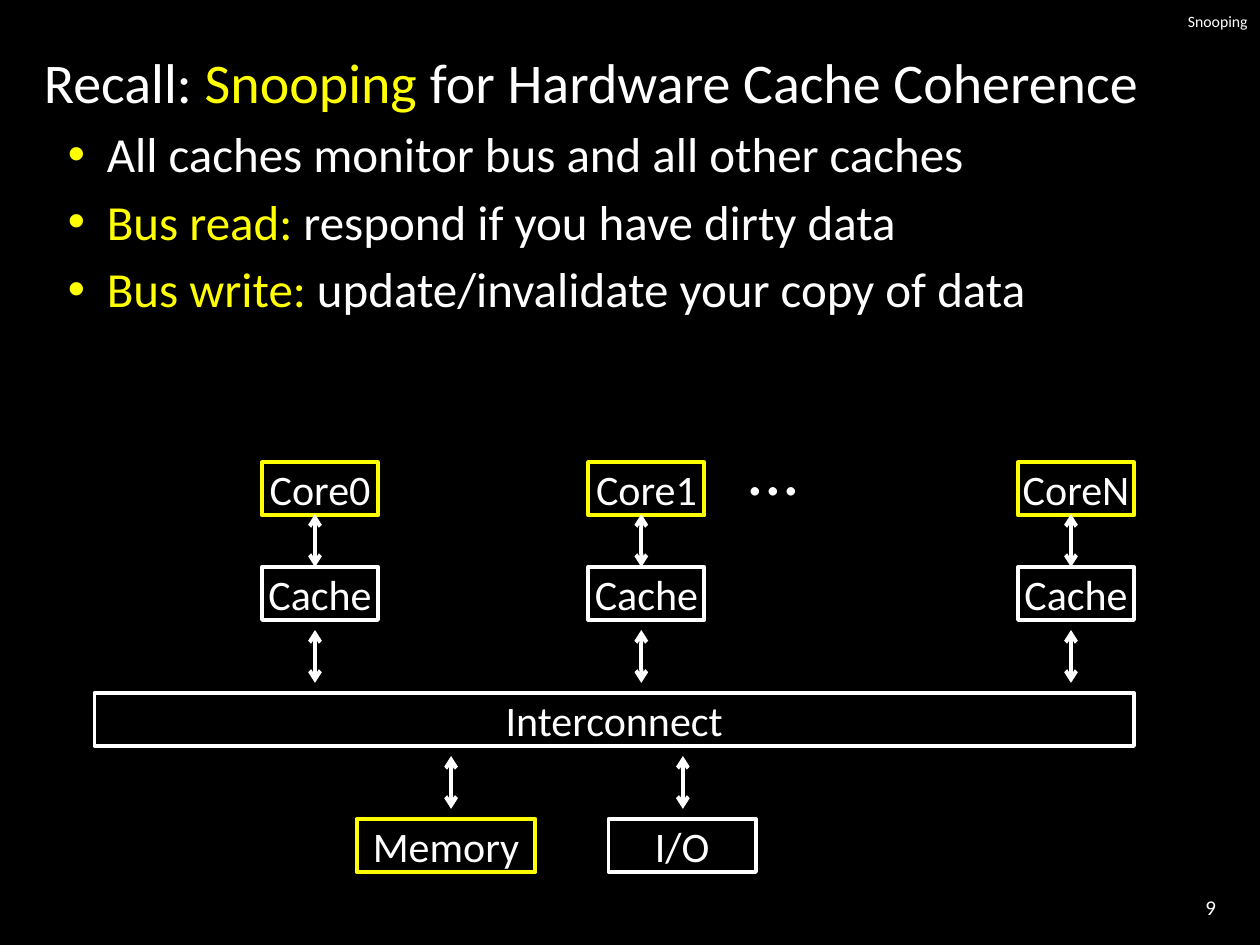
from lxml import etree
from pptx import Presentation
from pptx import util as u
from pptx.dml.color import RGBColor
from pptx.enum import shapes, text
from pptx.oxml.ns import qn

BLACK = RGBColor(0, 0, 0)
WHITE = RGBColor(255, 255, 255)
YELLOW = RGBColor(255, 255, 0)
Inches = u.Inches
Pt = u.Pt
LEFT, CENTER, RIGHT = text.PP_ALIGN.LEFT, text.PP_ALIGN.CENTER, text.PP_ALIGN.RIGHT

prs = Presentation()
prs.slide_width, prs.slide_height = Inches(10), Inches(7.5)
s = prs.slides.add_slide(prs.slide_layouts[6])
s.background.fill.solid()
s.background.fill.fore_color.rgb = BLACK


def write(p, runs, size, align=LEFT):
    p.alignment = align
    p.font.size = Pt(size)
    p.font.name = "Calibri"
    for words, color in runs:
        r = p.add_run()
        r.text = words
        r.font.color.rgb = color


def add_arrow(x, y):
    sp = s.shapes.add_connector(
        shapes.MSO_CONNECTOR.STRAIGHT, Inches(x), Inches(y), Inches(x), Inches(y + 0.42))
    sp.line.color.rgb = WHITE
    sp.line.width = Pt(2.25)
    ln = sp.line._get_or_add_ln()
    for end in ("a:headEnd", "a:tailEnd"):
        etree.SubElement(ln, qn(end), type="arrow")
    etree.SubElement(sp._element.spPr, qn("a:effectLst"))


labels = [
    ("9", 8.92, 7, 0.83, 0.4, 12, RIGHT, text.MSO_ANCHOR.MIDDLE, True),
    ("Snooping", 6.17, 0, 3.83, 0.33, 9, RIGHT, text.MSO_ANCHOR.MIDDLE, True),
    ("...", 5.83, 3.33, 0.63, 0.77, 40, LEFT, text.MSO_ANCHOR.TOP, False),
]
for words, x, y, w, h, size, align, anchor, wrap in labels:
    tf = s.shapes.add_textbox(Inches(x), Inches(y), Inches(w), Inches(h)).text_frame
    tf.word_wrap = wrap
    tf.vertical_anchor = anchor
    write(tf.paragraphs[0], [(words, WHITE)], size, align)

tf = s.shapes.add_textbox(Inches(0.25), Inches(0.33), Inches(9.5), Inches(3)).text_frame
tf.word_wrap = True
p = tf.paragraphs[0]
p.space_before = Pt(2)
write(p, [("Recall: ", WHITE), ("Snooping ", YELLOW),
          ("for Hardware Cache Coherence", WHITE)], 32)

bullets = [
    [("All caches monitor bus and all other caches", WHITE)],
    [("Bus read: ", YELLOW), ("respond if you have dirty data", WHITE)],
    [("Bus write: ", YELLOW), ("update/invalidate your copy of data", WHITE)],
]
for runs in bullets:
    p = tf.add_paragraph()
    p.level = 1
    p.space_before = Pt(5)
    write(p, runs, 28)
    pPr = p._p.get_or_add_pPr()
    pPr.set("marL", str(Inches(0.5)))
    pPr.set("indent", str(Inches(-0.31)))
    bu_font = etree.Element(qn("a:buFont"), typeface="Arial")
    bu_char = etree.Element(qn("a:buChar"), char="•")
    bu_color = etree.Element(qn("a:buClr"))
    etree.SubElement(bu_color, qn("a:srgbClr"), val=str(YELLOW))
    pPr.find(qn("a:spcBef")).addnext(bu_color)
    bu_color.addnext(bu_font)
    bu_font.addnext(bu_char)

boxes = [
    ("Memory", 2.83, 6.5, 1.42, YELLOW),
    ("I/O", 4.83, 6.5, 1.17, WHITE),
    ("Interconnect", 0.75, 5.5, 8.25, WHITE),
]
arrows = [(3.58, 6), (5.42, 6)]
for core, x in (("Core0", 2.08), ("Core1", 4.67), ("CoreN", 8.08)):
    boxes += [(core, x, 3.67, 0.92, YELLOW), ("Cache", x, 4.5, 0.92, WHITE)]
    arrows += [(x + 0.42, 4.08), (x + 0.42, 5)]

for words, x, y, w, color in boxes:
    sp = s.shapes.add_shape(
        shapes.MSO_SHAPE.RECTANGLE, Inches(x), Inches(y), Inches(w), Inches(0.42))
    sp.shadow.inherit = False
    sp.fill.background()
    sp.line.color.rgb = color
    sp.line.width = Pt(2.25)
    tf = sp.text_frame
    tf.word_wrap = words != "Cache"
    tf.vertical_anchor = text.MSO_ANCHOR.MIDDLE
    if w == 0.92:
        tf.margin_left = tf.margin_right = tf.margin_top = tf.margin_bottom = 0
    write(tf.paragraphs[0], [(words, WHITE)], 24, CENTER)

for x, y in arrows:
    add_arrow(x, y)

prs.save("out.pptx")
